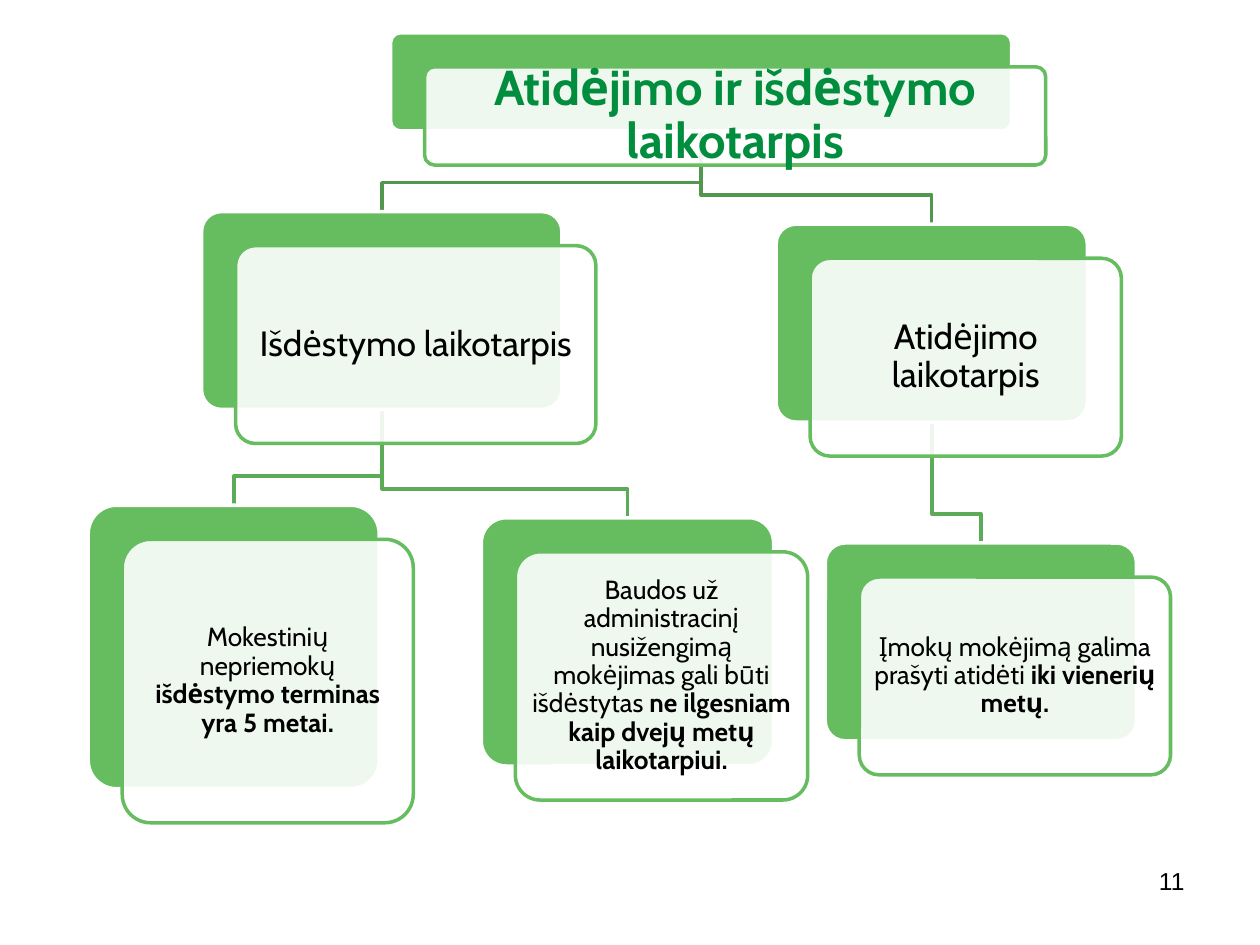
from lxml import etree
from pptx import Presentation
from pptx.dml.color import RGBColor
from pptx.enum import shapes, text
from pptx.oxml import ns
from pptx.util import Inches, Pt


def tint(part, code):
    part.solid()
    part.fore_color.rgb = RGBColor.from_string(code)


def write(box, runs, size, code, pad):
    frame = box.text_frame
    frame.word_wrap = True
    frame.auto_size = text.MSO_AUTO_SIZE.NONE
    frame.vertical_anchor = text.MSO_ANCHOR.MIDDLE
    frame.margin_left = frame.margin_right = Inches(pad)
    frame.margin_top = frame.margin_bottom = Inches(pad)
    para = frame.paragraphs[0]
    para.alignment = text.PP_ALIGN.CENTER
    para.line_spacing = 0.9
    for words, bold in runs:
        run = para.add_run()
        run.text = words
        run.font.name = "Cabin"
        run.font.size = Pt(size)
        run.font.bold = bold
        tint(run.font.fill, code)


GREEN = "65BD60"
STEP = 0.27
levels = [(28, "008D3D", 0.12, None), (20, "000000", 0.08, "51974D"), (15, "000000", 0.06, "5CAC57")]
nodes = [
    (0, None, 3.1, 0.26, 4.93, 0.78, [("Atidėjimo ir išdėstymo laikotarpis", True)]),
    (1, 0, 1.6, 1.68, 2.86, 1.57, [("Išdėstymo laikotarpis", False)]),
    (2, 1, 0.7, 4.01, 2.31, 2.25, [("Mokestinių nepriemokų ", False), ("išdėstymo terminas yra 5 metai.", True)]),
    (2, 1, 3.82, 4.11, 2.32, 1.97, [
        ("Baudos už administracinį nusižengimą mokėjimas gali būti išdėstytas ", False),
        ("ne ilgesniam kaip dvejų metų laikotarpiui.", True)]),
    (1, 0, 6.16, 1.78, 2.47, 1.57, [("Atidėjimo laikotarpis", False)]),
    (2, 4, 6.55, 4.31, 2.47, 1.57, [("Įmokų mokėjimą galima prašyti atidėti", False), (" iki vienerių metų.", True)]),
]

deck = Presentation()
deck.slide_width, deck.slide_height = Inches(10), Inches(7.5)
slide = deck.slides.add_slide(deck.slide_layouts[5])
tint(slide.background.fill, "FFFFFF")
items = slide.shapes
title = items.title

for level, parent, x, y, w, h, runs in reversed(nodes):
    if parent is None:
        continue
    _, _, left, top, wide, high, _ = nodes[parent]
    start, end, bend = left + wide / 2, x + w / 2, y - 0.23
    pen = items.build_freeform(Inches(start), Inches(top + high))
    turns = [(start, bend), (end, bend), (end, y)]
    pen.add_line_segments([(Inches(a), Inches(b)) for a, b in turns], close=False)
    link = pen.convert_to_shape()
    link.shadow.inherit = False
    link.fill.background()
    tint(link.line.fill, levels[level][3])
    link.line.width = Pt(2)

for level, parent, x, y, w, h, runs in nodes:
    size, code, pad, _ = levels[level]
    for shift, fill, line in [(0, GREEN, "FFFFFF"), (STEP, "FFFFFF", GREEN)]:
        card = items.add_shape(shapes.MSO_SHAPE.ROUNDED_RECTANGLE,
                               Inches(x + shift), Inches(y + shift), Inches(w), Inches(h))
        card.adjustments[0] = 0.1
        card.shadow.inherit = False
        tint(card.fill, fill)
        tint(card.line.fill, line)
        card.line.width = Pt(2)
    shade = card._element.spPr.find(ns.qn("a:solidFill"))[0]
    etree.SubElement(shade, ns.qn("a:alpha"), val="90000")

    inset = 0.03 * min(w, h)
    spot = [Inches(v) for v in (x + STEP + inset, y + STEP + inset, w - 2 * inset, h - 2 * inset)]
    if parent is None:
        label = title
        label.left, label.top, label.width, label.height = spot
        items._spTree.append(label._element)
    else:
        label = items.add_textbox(*spot)
    write(label, runs, size, code, pad)

page = items.add_textbox(Inches(9.1), Inches(6.82), Inches(0.54), Inches(0.52))
page.text_frame.word_wrap = True
page.text_frame.text = "11"
font = page.text_frame.paragraphs[0].runs[0].font
font.name, font.size = "Arial", Pt(14)
tint(font.fill, "000000")

deck.save("out.pptx")
